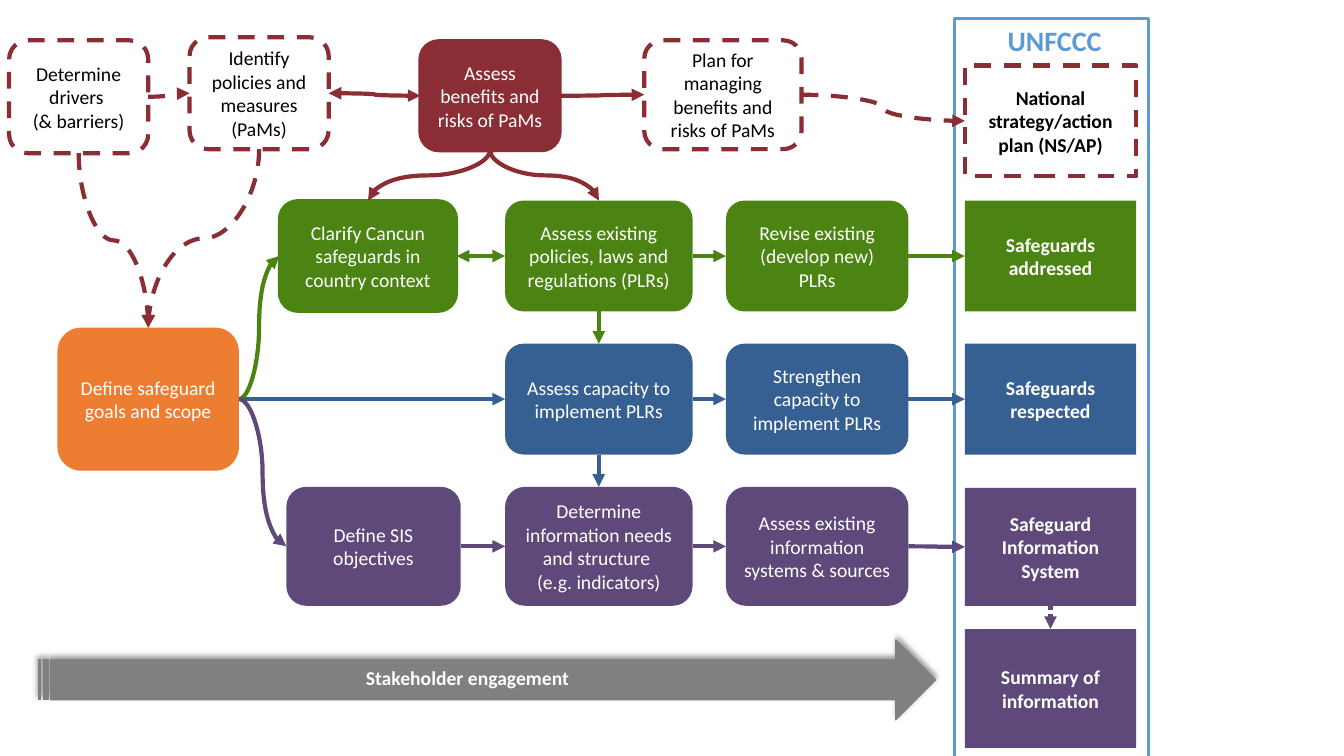
from collections import namedtuple

from lxml import etree
from pptx import Presentation
from pptx.dml.color import RGBColor
from pptx.enum import dml, shapes, text
from pptx.oxml import parse_xml
from pptx.oxml import ns
from pptx.util import Inches, Pt

Box = namedtuple("Box", "left top width height")

MAROON, GREEN, BLUE, PURPLE = "8B2D34", "4B8412", "366092", "5F497A"
ORANGE, SKY, GREY, WHITE, BLACK = "ED7D31", "5B9BD5", "808080", "FFFFFF", "000000"
TOP, LEFT, BOTTOM, RIGHT = range(4)
ROUND = shapes.MSO_SHAPE.ROUNDED_RECTANGLE
RECT = shapes.MSO_SHAPE.RECTANGLE
DASH = dml.MSO_LINE.DASH
DOT = dml.MSO_LINE.ROUND_DOT


def color(value):
    return RGBColor.from_string(value)


def inside(box, left, top, width, height):
    return Box(box.left + left, box.top + top, width, height)


def set_line(line, hue, width, dash=None):
    line.color.rgb = color(hue)
    line.width = Pt(width)
    if dash:
        line.dash_style = dash


def write(shape, words, hue, size=14, bold=False, align=text.PP_ALIGN.CENTER):
    frame = shape.text_frame
    frame.word_wrap = True
    frame.text = words
    for para in frame.paragraphs:
        para.alignment = align
        for span in para.runs:
            span.font.name = "Calibri"
            span.font.size = Pt(size)
            span.font.bold = bold
            span.font.color.rgb = color(hue)


def add_shape(page, kind, box, fill=None, line=None, width=3, dash=None):
    shape = page.shapes.add_shape(kind, *map(Inches, box))
    shape.shadow.inherit = False
    if fill:
        shape.fill.solid()
        shape.fill.fore_color.rgb = color(fill)
    else:
        shape.fill.background()
    if line:
        set_line(shape.line, line, width, dash)
    else:
        shape.line.fill.background()
    return shape


def add_label(page, box, words, hue, size, align):
    label = page.shapes.add_textbox(*map(Inches, box))
    write(label, words, hue, size, True, align)


def add_step(page, box, words, fill=None, line=None, kind=ROUND, bold=False, width=3):
    dash = None if fill else DASH
    step = add_shape(page, kind, box, fill, line, width, dash)
    step.text_frame.vertical_anchor = text.MSO_ANCHOR.MIDDLE
    write(step, words, WHITE if fill else BLACK, bold=bold)
    return step


def turn_downward(arrow):
    across = arrow.end_x - arrow.begin_x
    down = arrow.end_y - arrow.begin_y
    middle = (arrow.begin_x + arrow.end_x) // 2
    center = (arrow.begin_y + arrow.end_y) // 2
    frame = arrow._element.spPr.find(ns.qn("a:xfrm"))
    frame.set("rot", str((90 if across < 0 else 270) * 60000))
    frame.set("flipH", "0" if across < 0 else "1")
    frame.set("flipV", "0")
    arrow.left, arrow.top = middle - down // 2, center - abs(across) // 2
    arrow.width, arrow.height = down, abs(across)


def add_arrow(page, start, start_side, end, end_side, hue, dash=None, both=False):
    arrow = page.shapes.add_connector(shapes.MSO_CONNECTOR.CURVE, 0, 0, 0, 0)
    arrow.begin_connect(start, start_side)
    arrow.end_connect(end, end_side)
    if start_side == BOTTOM:
        turn_downward(arrow)
    set_line(arrow.line, hue, 3, dash)
    outline = arrow.line._get_or_add_ln()
    for tag in ("a:headEnd", "a:tailEnd") if both else ("a:tailEnd",):
        etree.SubElement(outline, ns.qn(tag), type="triangle")
    etree.SubElement(arrow._element.spPr, ns.qn("a:effectLst"))


def reporting_panel(page, box):
    add_shape(page, RECT, box, WHITE, SKY, 2)
    add_label(page, inside(box, 0.19, 0, 1.6, 0.44), "UNFCCC", SKY, 20, text.PP_ALIGN.CENTER)
    outputs = [
        (0.47, 1.1, "National strategy/action plan (NS/AP)", None, MAROON),
        (1.81, 1.1, "Safeguards addressed", GREEN, None),
        (3.23, 1.1, "Safeguards respected", BLUE, None),
        (4.66, 1.17, "Safeguard Information System", PURPLE, None),
        (6.06, 1.18, "Summary of information", PURPLE, None),
    ]
    steps = [
        add_step(page, inside(box, 0.1, top, 1.7, height), words, fill, line, RECT, True)
        for top, height, words, fill, line in outputs
    ]
    add_arrow(page, steps[3], BOTTOM, steps[4], TOP, PURPLE, DOT)
    return steps


def planning_row(page, box, strategy):
    plans = [
        (0, 0.03, 1.38, 1.12, "Determine drivers \n(& barriers)", None),
        (1.79, 0, 1.38, 1.11, "Identify policies and measures (PaMs)", None),
        (4.08, 0.04, 1.38, 1.08, "Assess benefits and risks of PaMs", MAROON),
        (6.3, 0.03, 1.56, 1.08, "Plan for managing benefits and risks of PaMs", None),
    ]
    steps = [
        add_step(page, inside(box, left, top, width, height), words, fill, MAROON)
        for left, top, width, height, words, fill in plans
    ]
    drivers, policies, risks, management = steps
    add_arrow(page, drivers, RIGHT, policies, LEFT, MAROON, DASH)
    add_arrow(page, policies, RIGHT, risks, LEFT, MAROON, both=True)
    add_arrow(page, risks, RIGHT, management, LEFT, MAROON)
    add_arrow(page, management, RIGHT, strategy, LEFT, MAROON, DASH)
    return steps


def safeguard_lane(page, box, hue, labels, output, first=None, both=False):
    first_left, first_width = first or (0, 0)
    columns = [(first_left, first_width), (2.24, 1.86), (4.43, 1.81)]
    steps = [
        add_step(page, inside(box, left, 0, width, box.height), words, hue, hue if both and left == 0 else None, width=2)
        for (left, width), words in zip(columns, labels)
        if words
    ]
    for number, (start, end) in enumerate(zip(steps, steps[1:] + [output])):
        add_arrow(page, start, RIGHT, end, LEFT, hue, both=both and number == 0)
    return steps


def engagement_arrow(page, box):
    arrow = add_shape(page, shapes.MSO_SHAPE.STRIPED_RIGHT_ARROW, box, GREY, GREY, 1)
    properties = arrow._element.spPr
    properties.remove(properties.find(ns.qn("a:effectLst")))
    properties.append(parse_xml(
        f'<a:effectLst {ns.nsdecls("a")}><a:outerShdw blurRad="{Pt(4)}" dist="{Pt(3)}" '
        'dir="16200000" rotWithShape="0"><a:srgbClr val="000000"><a:alpha val="40000"/>'
        '</a:srgbClr></a:outerShdw></a:effectLst>'
    ))
    add_label(page, inside(box, 3.15, 0.21, 2.84, 0.34), "Stakeholder engagement", WHITE, 14, text.PP_ALIGN.LEFT)


def main():
    deck = Presentation()
    deck.slide_width, deck.slide_height = Inches(13.33), Inches(7.5)
    page = deck.slides.add_slide(deck.slide_layouts[6])

    strategy, addressed, respected, system, _ = reporting_panel(page, Box(9.47, 0.18, 1.92, 7.4))
    drivers, policies, risks, _ = planning_row(page, Box(0.09, 0.37, 7.86, 1.15), strategy)
    goals = add_step(page, Box(0.57, 3.25, 1.8, 1.42), "Define safeguard goals and scope", ORANGE)

    clarify, laws, _ = safeguard_lane(page, Box(2.77, 1.99, 6.24, 1.1), GREEN, [
        "Clarify Cancun safeguards in country context",
        "Assess existing policies, laws and regulations (PLRs)",
        "Revise existing (develop new) PLRs",
    ], addressed, (0, 1.76), True)
    capacity, _ = safeguard_lane(page, Box(2.77, 3.41, 6.24, 1.1), BLUE, [
        None,
        "Assess capacity to implement PLRs",
        "Strengthen capacity to implement PLRs",
    ], respected)
    objectives, needs, _ = safeguard_lane(page, Box(2.77, 4.83, 6.24, 1.18), PURPLE, [
        "Define SIS objectives",
        "Determine information needs and structure \n(e.g. indicators)",
        "Assess existing information systems & sources",
    ], system, (0.07, 1.73))

    for source in (drivers, policies):
        add_arrow(page, source, BOTTOM, goals, TOP, MAROON, DASH)
    for target in (clarify, laws):
        add_arrow(page, risks, BOTTOM, target, TOP, MAROON)
    for target, hue in ((clarify, GREEN), (capacity, BLUE), (objectives, PURPLE)):
        add_arrow(page, goals, RIGHT, target, LEFT, hue)
    add_arrow(page, laws, BOTTOM, capacity, TOP, GREEN)
    add_arrow(page, capacity, BOTTOM, needs, TOP, BLUE)

    engagement_arrow(page, Box(0.38, 6.35, 8.9, 0.79))
    deck.save("out.pptx")


if __name__ == "__main__":
    main()
